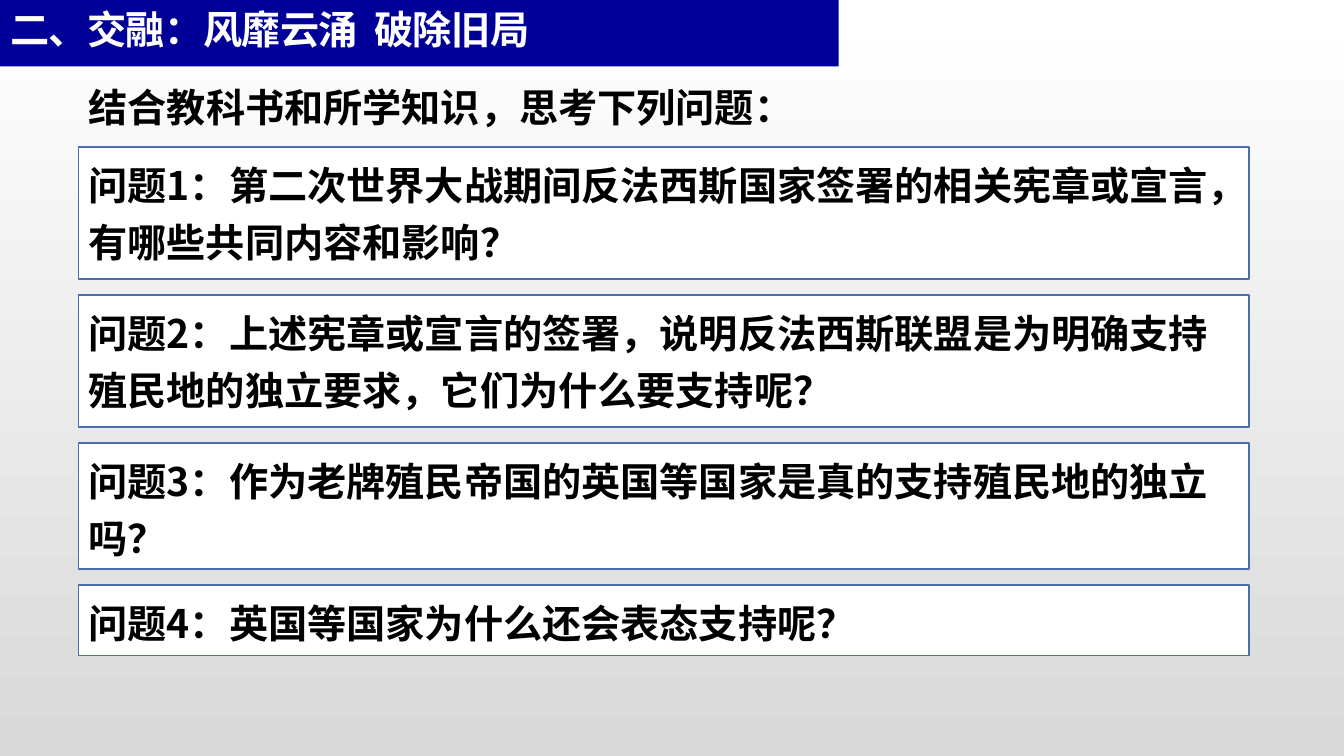
import pptx
import pptx.dml.color
import pptx.enum.lang
import pptx.enum.shapes
import pptx.enum.text
import pptx.oxml
import pptx.oxml.ns
import pptx.util

FONT = "Noto Sans CJK SC"
WIDTH, HEIGHT = pptx.util.Inches(13.33), pptx.util.Inches(7.5)
LEFT, CARD_WIDTH = 5.85, 87.1
CARD_TOP, CARD_GAP = 19.47, 2.1
QUESTIONS = [
    ("问题1：第二次世界大战期间反法西斯国家签署的相关宪章或宣言，有哪些共同内容和影响？", 17.47),
    ("问题2：上述宪章或宣言的签署，说明反法西斯联盟是为明确支持殖民地的独立要求，它们为什么要支持呢？", 17.47),
    ("问题3：作为老牌殖民帝国的英国等国家是真的支持殖民地的独立吗？", 16.67),
    ("问题4：英国等国家为什么还会表态支持呢？", 9.33),
]


def color(value):
    """Turn a hex string into a colour."""
    return pptx.dml.color.RGBColor.from_string(value)


def area(left, top, width, height):
    """Turn percentages of the slide's size into lengths."""
    return [int(size * share / 100) for size, share in
            zip((WIDTH, HEIGHT, WIDTH, HEIGHT), (left, top, width, height))]


def apply(target, formats):
    """Set each named attribute on the target."""
    for name, value in formats.items():
        setattr(target, name, value)


def write(box, text, ink="000000", line_spacing=1.0, tracking=None):
    """Write one bold, left-aligned paragraph into a box."""
    apply(box.text_frame, {
        "word_wrap": True,
        "auto_size": pptx.enum.text.MSO_AUTO_SIZE.NONE,
        "vertical_anchor": pptx.enum.text.MSO_ANCHOR.TOP,
    })
    para = box.text_frame.paragraphs[0]
    apply(para, {"alignment": pptx.enum.text.PP_ALIGN.LEFT, "line_spacing": line_spacing})
    para._p.get_or_add_pPr().set("hangingPunct", "1")
    span = para.add_run()
    span.text = text
    apply(span.font, {
        "name": FONT,
        "size": pptx.util.Pt(28),
        "bold": True,
        "language_id": pptx.enum.lang.MSO_LANGUAGE_ID.SIMPLIFIED_CHINESE,
    })
    span.font.color.rgb = color(ink)
    properties = span._r.get_or_add_rPr()
    east_asian = pptx.oxml.parse_xml(f'<a:ea {pptx.oxml.ns.nsdecls("a")} typeface="{FONT}"/>')
    properties.find(pptx.oxml.ns.qn("a:latin")).addnext(east_asian)
    if tracking is not None:
        properties.set("spc", str(tracking))


def paint_background(page):
    """Fade the page from white at the top to grey at the bottom."""
    fill = page.background.fill
    fill.gradient()
    fill.gradient_angle = 270
    for stop, position, value in zip(fill.gradient_stops, (0, 1), ("FFFFFF", "D9D9D9")):
        stop.position = position
        stop.color.rgb = color(value)


def add_banner(page, text):
    """Turn the title placeholder into the blue heading band."""
    banner = page.shapes.title
    apply(banner, dict(zip(("left", "top", "width", "height"), area(0, 0, 62.4, 8.8))))
    banner.fill.solid()
    banner.fill.fore_color.rgb = color("000099")
    write(banner, text, ink="FFFFFF", tracking=-40)


def add_prompt(page, text):
    """Add the line that introduces the questions."""
    write(page.shapes.add_textbox(*area(LEFT, 10.4, 57.3, 7.6)), text)


def add_question(page, text, top, height):
    """Add one white outlined question card."""
    card = page.shapes.add_shape(pptx.enum.shapes.MSO_SHAPE.RECTANGLE,
                                 *area(LEFT, top, CARD_WIDTH, height))
    card.shadow.inherit = False
    card.fill.solid()
    card.fill.fore_color.rgb = color("FFFFFF")
    card.line.color.rgb = color("476FAA")
    card.line.width = pptx.util.Pt(1)
    write(card, text, line_spacing=1.2)


def main():
    """Build the slide and save it."""
    deck = pptx.Presentation()
    apply(deck, {"slide_width": WIDTH, "slide_height": HEIGHT})
    page = deck.slides.add_slide(deck.slide_layouts.get_by_name("Title Only"))
    paint_background(page)
    add_banner(page, "二、交融：风靡云涌  破除旧局")
    add_prompt(page, "结合教科书和所学知识，思考下列问题：")
    top = CARD_TOP
    for text, height in QUESTIONS:
        add_question(page, text, top, height)
        top += height + CARD_GAP
    deck.save("out.pptx")


if __name__ == "__main__":
    main()
